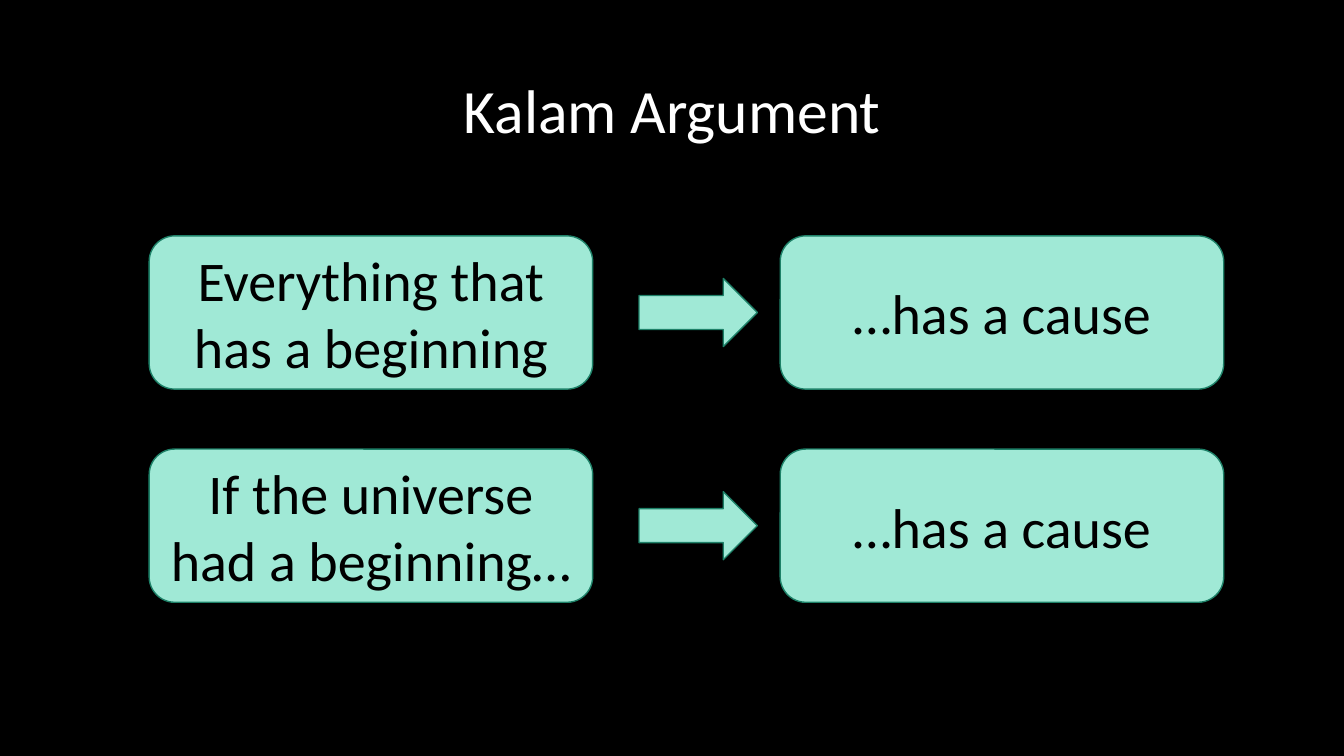
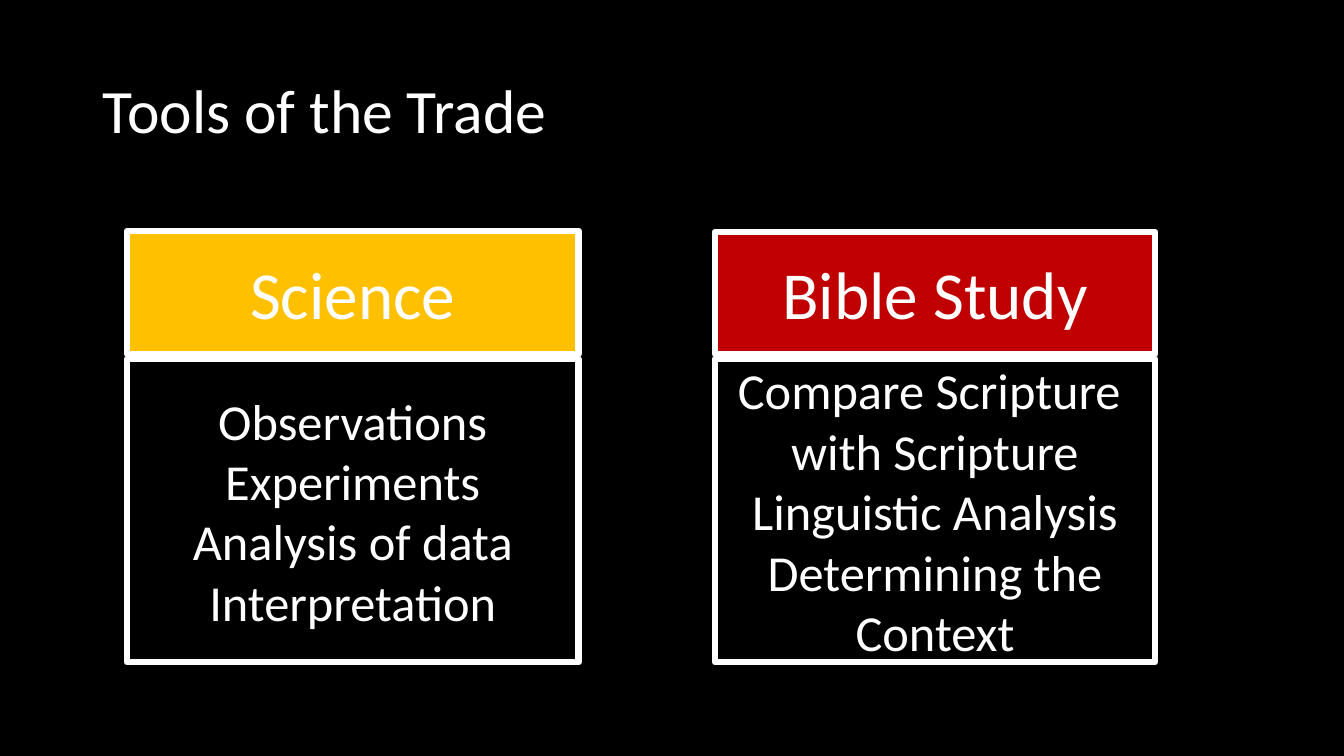
from dataclasses import dataclass

from pptx import Presentation
from pptx.dml.color import RGBColor
from pptx.enum.shapes import MSO_SHAPE as Preset
from pptx.enum.text import MSO_ANCHOR as Anchor, PP_ALIGN as Align
from pptx.shapes.autoshape import Shape
from pptx.slide import Slide
from pptx.util import Inches, Pt

SLIDE_WIDTH, SLIDE_HEIGHT = Inches(13.33), Inches(7.5)


@dataclass(frozen=True)
class Theme:
    font: str = "Calibri"
    black: str = "000000"
    white: str = "FFFFFF"
    mint: str = "A0E9D6"
    green: str = "1E8168"
    gold: str = "FFC000"
    red: str = "C00000"
    title_size: float = 44
    step_size: float = 40
    header_size: float = 48
    body_size: float = 36
    thin_line: float = 1
    thick_line: float = 4.5


THEME = Theme()


@dataclass(frozen=True)
class Area:
    """A rectangle in percent of the slide's width and height."""
    left: float
    top: float
    width: float
    height: float

    def lengths(self) -> tuple[int, int, int, int]:
        return (int(SLIDE_WIDTH * self.left / 100), int(SLIDE_HEIGHT * self.top / 100),
                int(SLIDE_WIDTH * self.width / 100), int(SLIDE_HEIGHT * self.height / 100))


@dataclass(frozen=True)
class Look:
    fill: str | None
    line: str
    line_width: float
    text_color: str
    text_size: float


@dataclass(frozen=True)
class Implication:
    premise: str
    conclusion: str


@dataclass(frozen=True)
class ToolCard:
    left: float
    width: float
    header_top: float
    color: str
    heading: str
    tools: tuple[str, ...]


TITLE_AREA = Area(6.9, 5.33, 86.25, 19.33)

STEP_LOOK = Look(THEME.mint, THEME.green, THEME.thin_line, THEME.black, THEME.step_size)
PREMISE_LEFT, ARROW_LEFT, CONCLUSION_LEFT = 11.1, 47.55, 58.05
STEP_WIDTH, STEP_HEIGHT = 33, 20.27
ARROW_WIDTH, ARROW_HEIGHT = 8.8, 9
FIRST_STEP_TOP, STEP_PITCH = 31.2, 28.2
IMPLICATIONS = (
    Implication("Everything that has a beginning", "…has a cause"),
    Implication("If the universe had a beginning…", "…has a cause"),
)

HEADER_BOTTOM, BODY_TOP, BODY_HEIGHT = 46.87, 47.47, 40.13
BODY_LOOK = Look(None, THEME.white, THEME.thick_line, THEME.white, THEME.body_size)
TOOL_CARDS = (
    ToolCard(9.45, 33.6, 30.53, THEME.gold, "Science",
             ("Observations", "Experiments", "Analysis of data", "Interpretation")),
    ToolCard(53.18, 32.78, 30.67, THEME.red, "Bible Study",
             ("Compare Scripture ", "with Scripture", "Linguistic Analysis",
              "Determining the Context")),
)


def rgb(color: str) -> RGBColor:
    return RGBColor.from_string(color)


def write(shape: Shape, lines: tuple[str, ...], size: float, color: str,
          align: Align = Align.CENTER, spacing: float = 1.0) -> None:
    """Fill a shape with one paragraph a line, centred vertically."""
    frame = shape.text_frame
    frame.word_wrap = True
    frame.vertical_anchor = Anchor.MIDDLE
    frame.text = "\n".join(lines)
    for paragraph in frame.paragraphs:
        paragraph.alignment = align
        paragraph.line_spacing = spacing
        paragraph.font.name = THEME.font
        paragraph.font.size = Pt(size)
        paragraph.font.color.rgb = rgb(color)


def add_block(slide: Slide, preset: Preset, area: Area, look: Look, *lines: str) -> None:
    shape = slide.shapes.add_shape(preset, *area.lengths())
    shape.shadow.inherit = False
    if look.fill is None:
        shape.fill.background()
    else:
        shape.fill.solid()
        shape.fill.fore_color.rgb = rgb(look.fill)
    shape.line.color.rgb = rgb(look.line)
    shape.line.width = Pt(look.line_width)
    if lines:
        write(shape, lines, look.text_size, look.text_color)


def add_titled_slide(presentation: Presentation, title: str, align: Align) -> Slide:
    slide = presentation.slides.add_slide(presentation.slide_layouts[6])
    slide.background.fill.solid()
    slide.background.fill.fore_color.rgb = rgb(THEME.black)
    box = slide.shapes.add_textbox(*TITLE_AREA.lengths())
    write(box, (title,), THEME.title_size, THEME.white, align, spacing=0.9)
    return slide


def add_implication(slide: Slide, row: int, implication: Implication) -> None:
    top = FIRST_STEP_TOP + row * STEP_PITCH
    for left, text in ((PREMISE_LEFT, implication.premise),
                       (CONCLUSION_LEFT, implication.conclusion)):
        add_block(slide, Preset.ROUNDED_RECTANGLE,
                  Area(left, top, STEP_WIDTH, STEP_HEIGHT), STEP_LOOK, text)
    arrow_top = top + (STEP_HEIGHT - ARROW_HEIGHT) / 2
    add_block(slide, Preset.RIGHT_ARROW,
              Area(ARROW_LEFT, arrow_top, ARROW_WIDTH, ARROW_HEIGHT), STEP_LOOK)


def add_tool_card(slide: Slide, card: ToolCard) -> None:
    header_look = Look(card.color, THEME.white, THEME.thick_line,
                       THEME.white, THEME.header_size)
    header = Area(card.left, card.header_top, card.width, HEADER_BOTTOM - card.header_top)
    body = Area(card.left, BODY_TOP, card.width, BODY_HEIGHT)
    add_block(slide, Preset.RECTANGLE, body, BODY_LOOK, *card.tools)
    add_block(slide, Preset.RECTANGLE, header, header_look, card.heading)


def main() -> None:
    presentation = Presentation()
    presentation.slide_width, presentation.slide_height = SLIDE_WIDTH, SLIDE_HEIGHT

    argument = add_titled_slide(presentation, "Kalam Argument", Align.CENTER)
    for row, implication in enumerate(IMPLICATIONS):
        add_implication(argument, row, implication)

    tools = add_titled_slide(presentation, "Tools of the Trade", Align.LEFT)
    for card in TOOL_CARDS:
        add_tool_card(tools, card)

    presentation.save("out.pptx")


if __name__ == "__main__":
    main()
